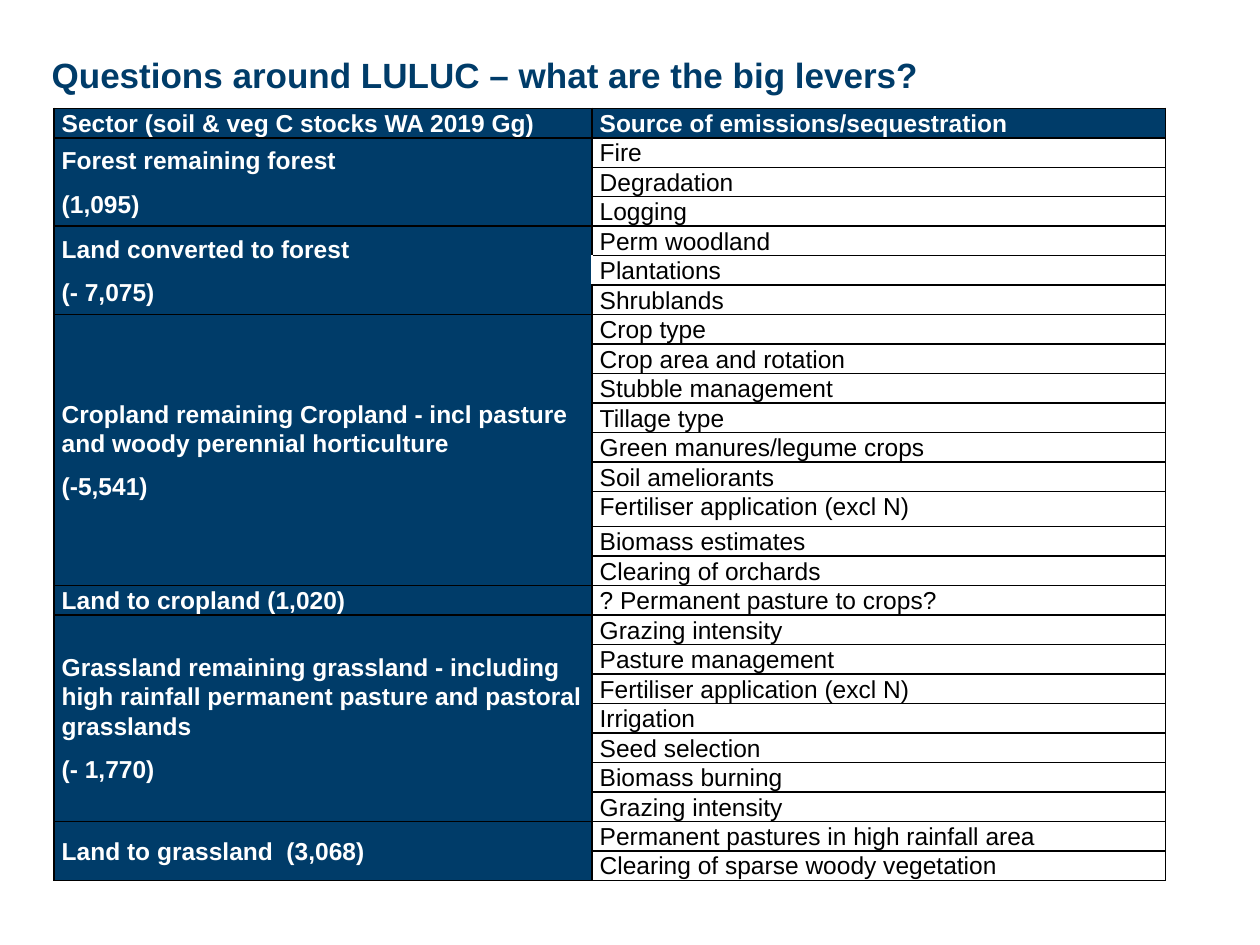
from lxml import etree
from pptx import Presentation
from pptx.dml.color import RGBColor
from pptx.enum.text import MSO_ANCHOR, MSO_AUTO_SIZE, PP_ALIGN
from pptx.oxml.ns import qn
from pptx.util import Inches, Pt

MIDDLE, TOP = MSO_ANCHOR.MIDDLE, MSO_ANCHOR.TOP
LEFT = PP_ALIGN.LEFT
NO_AUTOFIT = MSO_AUTO_SIZE.NONE
TITLE_ONLY = 5

THEME = {"font": "Arial", "navy": "003C69", "white": "FFFFFF", "black": "000000",
         "title_size": 20, "table_size": 14, "border": 1}

TITLE = "Questions around LULUC – what are the big levers?"
HEADER = ("Sector (soil & veg C stocks WA 2019 Gg)", "Source of emissions/sequestration")
SECTORS = [
    (["Forest remaining forest", "(1,095)"],
     ["Fire", "Degradation", "Logging"]),
    (["Land converted to forest", "(- 7,075)"],
     ["Perm woodland", "Plantations", "Shrublands"]),
    (["Cropland remaining Cropland - incl pasture and woody perennial horticulture", "(-5,541)"],
     ["Crop type", "Crop area and rotation", "Stubble management", "Tillage type",
      "Green manures/legume crops", "Soil ameliorants", "Fertiliser application (excl N)",
      "Biomass estimates", "Clearing of orchards"]),
    (["Land to cropland (1,020)"],
     ["? Permanent pasture to crops?"]),
    (["Grassland remaining grassland - including high rainfall permanent pasture "
      "and pastoral grasslands", "(- 1,770)"],
     ["Grazing intensity", "Pasture management", "Fertiliser application (excl N)",
      "Irrigation", "Seed selection", "Biomass burning", "Grazing intensity"]),
    (["Land to grassland  (3,068)"],
     ["Permanent pastures in high rainfall area", "Clearing of sparse woody vegetation"]),
]
WHITE_LEFT_EDGE = "Plantations"
COLUMN_WIDTHS = (4.27, 4.55)
ROW_HEIGHT = 0.21
TALL_ROW, TALL_HEIGHT = 13, 0.28


def color(name):
    return RGBColor.from_string(THEME[name])


def style_font(font, size, color_name, bold):
    font.name = THEME["font"]
    font.size = Pt(size)
    font.bold = bold
    font.color.rgb = color(color_name)


def add_borders(cell, left_color="black"):
    properties = cell._tc.get_or_add_tcPr()
    for side in "LRTB":
        line = etree.SubElement(properties, qn(f"a:ln{side}"), w=str(Pt(THEME["border"])))
        fill = etree.SubElement(line, qn("a:solidFill"))
        name = left_color if side == "L" else "black"
        etree.SubElement(fill, qn("a:srgbClr"), val=THEME[name])


def paint_cell(cell, fill_name, left_color="black"):
    add_borders(cell, left_color)
    cell.fill.solid()
    cell.fill.fore_color.rgb = color(fill_name)


def write_cell(cell, lines, color_name, bold, anchor):
    cell.margin_left = cell.margin_right = Inches(0.06)
    cell.margin_top = cell.margin_bottom = 0
    cell.vertical_anchor = anchor
    cell.text = "\n".join(lines)
    for para in cell.text_frame.paragraphs:
        para.line_spacing = 1.07
        para.space_after = Pt(8)
        style_font(para.font, THEME["table_size"], color_name, bold)


def add_title(slide):
    title = slide.shapes.title
    title.left, title.top = Inches(0.41), Inches(0.36)
    title.width, title.height = Inches(6.89), Inches(0.47)
    frame = title.text_frame
    frame.text = TITLE
    frame.auto_size = NO_AUTOFIT
    frame.word_wrap = True
    frame.margin_left = frame.margin_right = 0
    frame.vertical_anchor = MIDDLE
    para = frame.paragraphs[0]
    para.alignment = LEFT
    style_font(para.font, THEME["title_size"], "navy", True)


def add_sector_table(slide):
    row_count = 1 + sum(len(sources) for _, sources in SECTORS)
    table = slide.shapes.add_table(
        row_count, len(COLUMN_WIDTHS), Inches(0.43), Inches(0.86),
        Inches(sum(COLUMN_WIDTHS)), Inches(row_count * ROW_HEIGHT)).table
    table.horz_banding = False
    for column, width in zip(table.columns, COLUMN_WIDTHS):
        column.width = Inches(width)
    for index, row in enumerate(table.rows):
        row.height = Inches(TALL_HEIGHT if index == TALL_ROW else ROW_HEIGHT)

    for column, (text, anchor) in enumerate(zip(HEADER, (MIDDLE, TOP))):
        cell = table.cell(0, column)
        paint_cell(cell, "navy")
        write_cell(cell, [text], "white", True, anchor)

    first = 1
    for sector_lines, sources in SECTORS:
        for row, source in enumerate(sources, first):
            paint_cell(table.cell(row, 0), "navy")
            cell = table.cell(row, 1)
            paint_cell(cell, "white", "white" if source == WHITE_LEFT_EDGE else "black")
            write_cell(cell, [source], "black", False, MIDDLE if len(sources) == 1 else TOP)
        sector = table.cell(first, 0)
        write_cell(sector, sector_lines, "white", True, MIDDLE)
        if len(sources) > 1:
            sector.merge(table.cell(first + len(sources) - 1, 0))
        first += len(sources)


def main():
    deck = Presentation()
    deck.slide_width, deck.slide_height = Inches(10), Inches(7.5)
    slide = deck.slides.add_slide(deck.slide_layouts[TITLE_ONLY])
    add_title(slide)
    add_sector_table(slide)
    deck.save("out.pptx")


if __name__ == "__main__":
    main()
